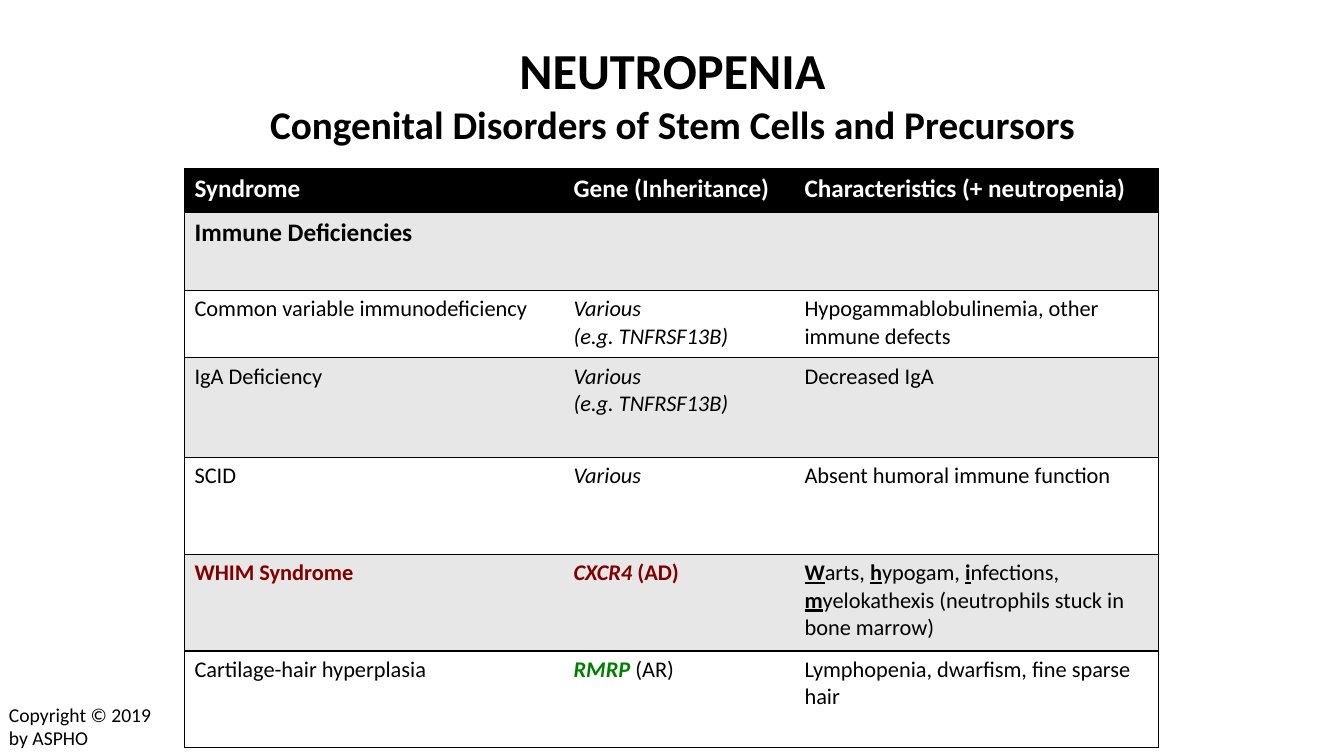
from dataclasses import dataclass

from lxml import etree
from pptx import Presentation
from pptx.dml.color import RGBColor
from pptx.enum.text import MSO_ANCHOR, PP_ALIGN
from pptx.oxml.ns import qn
from pptx.util import Inches, Pt

CENTER = PP_ALIGN.CENTER
LEFT = PP_ALIGN.LEFT
MIDDLE = MSO_ANCHOR.MIDDLE
TOP = MSO_ANCHOR.TOP

FONT = "Calibri"
BLACK, WHITE, GRAY = "000000", "FFFFFF", "E7E7E7"
MAROON, GREEN = "800000", "008000"
COLUMN_WIDTHS = (3.76, 2.29, 3.61)
ROW_HEIGHTS = (0.44, 0.77, 0.67, 0.99, 0.96, 0.96, 0.96)


@dataclass(frozen=True)
class Span:
    text: str
    size: int = 16
    color: str = BLACK
    bold: bool = False
    italic: bool = False
    underline: bool = False


Lines = list[list[Span]]


@dataclass(frozen=True)
class TextBox:
    left: float
    top: float
    width: float
    height: float
    lines: Lines
    align: PP_ALIGN = LEFT
    anchor: MSO_ANCHOR = TOP


def rgb(value: str) -> RGBColor:
    return RGBColor.from_string(value)


def plain(text: str) -> Lines:
    return [[Span(text)]]


def heading(text: str, color: str = BLACK, size: int = 18) -> Lines:
    return [[Span(text, size, color, bold=True)]]


def genes(*names: str) -> Lines:
    return [[Span(name, italic=True)] for name in names]


def initial(letter: str) -> Span:
    return Span(letter, bold=True, underline=True)


# Content
TEXT_BOXES = [
    TextBox(0.67, 0.3, 12, 1.25,
            heading("NEUTROPENIA", size=36)
            + heading("Congenital Disorders of Stem Cells and Precursors", size=28),
            CENTER, MIDDLE),
    TextBox(-0.01, 6.92, 1.76, 0.57, [[Span("Copyright © 2019 by ASPHO", 14)]]),
]

WHIM_TRAITS = [[
    initial("W"), Span("arts, "),
    initial("h"), Span("ypogam, "),
    initial("i"), Span("nfections, "),
    initial("m"), Span("yelokathexis (neutrophils stuck in bone marrow)"),
]]

SYNDROME_ROWS: list[list[Lines]] = [
    [heading(text, WHITE) for text in
     ("Syndrome", "Gene (Inheritance)", "Characteristics (+ neutropenia)")],
    [heading("Immune Deficiencies"), [], []],
    [plain("Common variable immunodeficiency"),
     genes("Various", "(e.g. TNFRSF13B)"),
     plain("Hypogammablobulinemia, other immune defects")],
    [plain("IgA Deficiency"),
     genes("Various", "(e.g. TNFRSF13B)"),
     plain("Decreased IgA")],
    [plain("SCID"), genes("Various"), plain("Absent humoral immune function")],
    [heading("WHIM Syndrome", MAROON, 16),
     [[Span("CXCR4", color=MAROON, bold=True, italic=True),
       Span(" (AD)", color=MAROON, bold=True)]],
     WHIM_TRAITS],
    [plain("Cartilage-hair hyperplasia"),
     [[Span("RMRP ", color=GREEN, bold=True, italic=True), Span("(AR)")]],
     plain("Lymphopenia, dwarfism, fine sparse hair")],
]


def write_lines(frame, lines: Lines, align: PP_ALIGN = LEFT) -> None:
    for index, spans in enumerate(lines):
        para = frame.add_paragraph() if index else frame.paragraphs[0]
        para.alignment = align
        for span in spans:
            run = para.add_run()
            run.text = span.text
            font = run.font
            font.name = FONT
            font.size = Pt(span.size)
            font.color.rgb = rgb(span.color)
            font.bold = span.bold
            font.italic = span.italic
            font.underline = span.underline


def add_text_box(page, item: TextBox) -> None:
    box = page.shapes.add_textbox(Inches(item.left), Inches(item.top),
                                  Inches(item.width), Inches(item.height))
    frame = box.text_frame
    frame.word_wrap = True
    frame.vertical_anchor = item.anchor
    write_lines(frame, item.lines, item.align)


def set_borders(cell, visible: set[str]) -> None:
    properties = cell._tc.get_or_add_tcPr()
    for index, side in enumerate(("lnL", "lnR", "lnT", "lnB")):
        line = etree.Element(qn(f"a:{side}"), w=str(Pt(1)))
        if side in visible:
            fill = etree.SubElement(line, qn("a:solidFill"))
            etree.SubElement(fill, qn("a:srgbClr"), val=BLACK)
        else:
            etree.SubElement(line, qn("a:noFill"))
        properties.insert(index, line)


def add_syndrome_table(page) -> None:
    table = page.shapes.add_table(
        len(ROW_HEIGHTS), len(COLUMN_WIDTHS), Inches(1.83), Inches(1.67),
        Inches(sum(COLUMN_WIDTHS)), Inches(sum(ROW_HEIGHTS))).table
    for column, width in zip(table.columns, COLUMN_WIDTHS):
        column.width = Inches(width)
    for row, height in zip(table.rows, ROW_HEIGHTS):
        row.height = Inches(height)

    outer_sides = {0: {"lnL"}, len(COLUMN_WIDTHS) - 1: {"lnR"}}
    for row_index, contents in enumerate(SYNDROME_ROWS):
        band = GRAY if row_index % 2 else WHITE
        for column_index, lines in enumerate(contents):
            cell = table.cell(row_index, column_index)
            cell.fill.solid()
            cell.fill.fore_color.rgb = rgb(band if row_index else BLACK)
            set_borders(cell, {"lnT", "lnB"} | outer_sides.get(column_index, set()))
            write_lines(cell.text_frame, lines)


def main() -> None:
    deck = Presentation()
    deck.slide_width = Inches(13.33)
    deck.slide_height = Inches(7.5)
    page = deck.slides.add_slide(deck.slide_layouts[6])

    # Title and copyright line
    for item in TEXT_BOXES:
        add_text_box(page, item)

    # Table of syndromes
    add_syndrome_table(page)

    deck.save("out.pptx")


if __name__ == "__main__":
    main()
